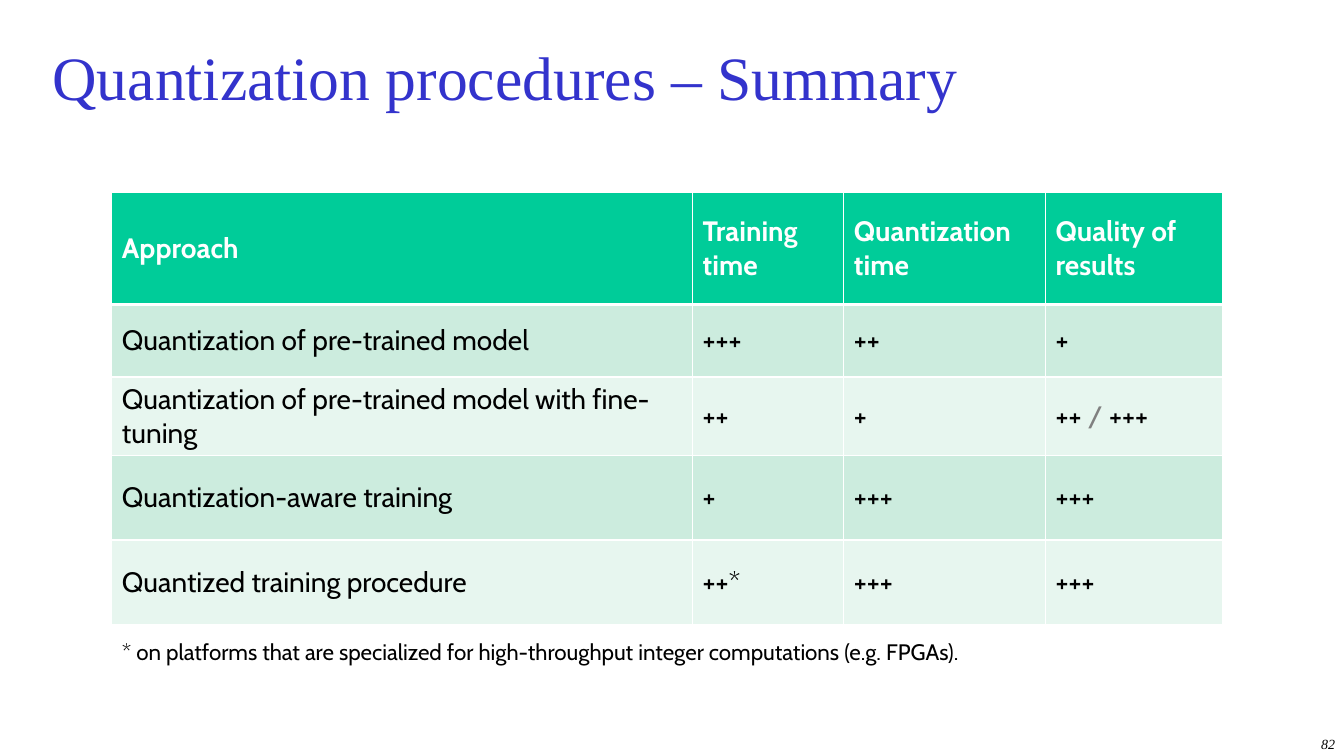
from lxml import etree
from pptx import Presentation
from pptx import util as u
from pptx.dml.color import RGBColor
from pptx.enum import text
from pptx.oxml import ns

HEADER = ["Approach", "Training time", "Quantization time", "Quality of results"]
APPROACHES = [
    ["Quantization of pre-trained model", "+++", "++", "+"],
    ["Quantization of pre-trained model with fine-tuning", "++", "+", "++ / +++"],
    ["Quantization-aware training", "+", "+++", "+++"],
    ["Quantized training procedure", "++*", "+++", "+++"],
]
COLUMN_WIDTHS = [5.76, 1.5, 2, 1.76]
ROW_HEIGHTS = [1.11, 0.72, 0.77, 0.84, 0.84]
BAND_FILLS = ["CCECDE", "E7F6EF"]


def color(value):
    return RGBColor.from_string(value)


def style(font, name, size, shade, bold=False, italic=False):
    font.name = name
    font.size = u.Pt(size)
    font.color.rgb = color(shade)
    font.bold = bold
    font.italic = italic


def inches(box):
    return [u.Inches(length) for length in box]


def add_title(page, box, wording):
    title = page.shapes.title
    title.left, title.top, title.width, title.height = inches(box)
    frame = title.text_frame
    frame.text = wording
    frame.vertical_anchor = text.MSO_ANCHOR.MIDDLE
    para = frame.paragraphs[0]
    para.alignment = text.PP_ALIGN.LEFT
    style(para.font, "Times New Roman", 44, "3333CC")


def add_text(page, box, wording, alignment, name, size, italic=False):
    frame = page.shapes.add_textbox(*inches(box)).text_frame
    frame.word_wrap = True
    frame.text = wording
    para = frame.paragraphs[0]
    para.alignment = alignment
    style(para.font, name, size, "000000", italic=italic)


def add_border(cell, side, points):
    properties = cell._tc.get_or_add_tcPr()
    line = etree.SubElement(properties, ns.qn(f"a:ln{side}"), w=str(u.Pt(points)))
    fill = etree.SubElement(line, ns.qn("a:solidFill"))
    etree.SubElement(fill, ns.qn("a:srgbClr"), val="FFFFFF")


def fill_cell(cell, wording, row):
    heading = row == 0
    widths = {"L": 1, "R": 1, "T": 3 if row == 1 else 1, "B": 3 if heading else 1}
    for side, points in widths.items():
        add_border(cell, side, points)
    cell.fill.solid()
    cell.fill.fore_color.rgb = color("00CC99" if heading else BAND_FILLS[(row - 1) % 2])
    cell.vertical_anchor = text.MSO_ANCHOR.MIDDLE
    para = cell.text_frame.paragraphs[0]
    style(para.font, "Cabin", 20, "FFFFFF" if heading else "000000", bold=heading)
    before, slash, after = wording.partition(" / ")
    for part in filter(None, (before, slash, after)):
        span = para.add_run()
        span.text = part
        shade = "808080" if part == slash else "FFFFFF" if heading else "000000"
        style(span.font, "Cabin", 20, shade, bold=heading)


def add_comparison(page, box):
    rows = [HEADER, *APPROACHES]
    table = page.shapes.add_table(len(rows), len(HEADER), *inches(box)).table
    for column, width in zip(table.columns, COLUMN_WIDTHS):
        column.width = u.Inches(width)
    for row, height in zip(table.rows, ROW_HEIGHTS):
        row.height = u.Inches(height)
    for row, wordings in enumerate(rows):
        for column, wording in enumerate(wordings):
            fill_cell(table.cell(row, column), wording, row)


def add_summary(deck):
    page = deck.slides.add_slide(deck.slide_layouts[5])
    left, top = 1.11, 1.91
    width, height = sum(COLUMN_WIDTHS), sum(ROW_HEIGHTS)
    add_title(page, (0.42, 0.25, 12.47, 1), "Quantization procedures – Summary")
    add_comparison(page, (left, top, width, height))
    add_text(page, (10.56, 7.25, 2.78, 0.25), "82",
             text.PP_ALIGN.RIGHT, "Times New Roman", 10, italic=True)
    add_text(page, (left, top + height + 0.09, width, 0.37),
             "* on platforms that are specialized for high-throughput integer "
             "computations (e.g. FPGAs).", text.PP_ALIGN.LEFT, "Cabin", 16)


def main():
    deck = Presentation()
    deck.slide_width, deck.slide_height = u.Inches(13.33), u.Inches(7.5)
    add_summary(deck)
    deck.save("out.pptx")


if __name__ == "__main__":
    main()
